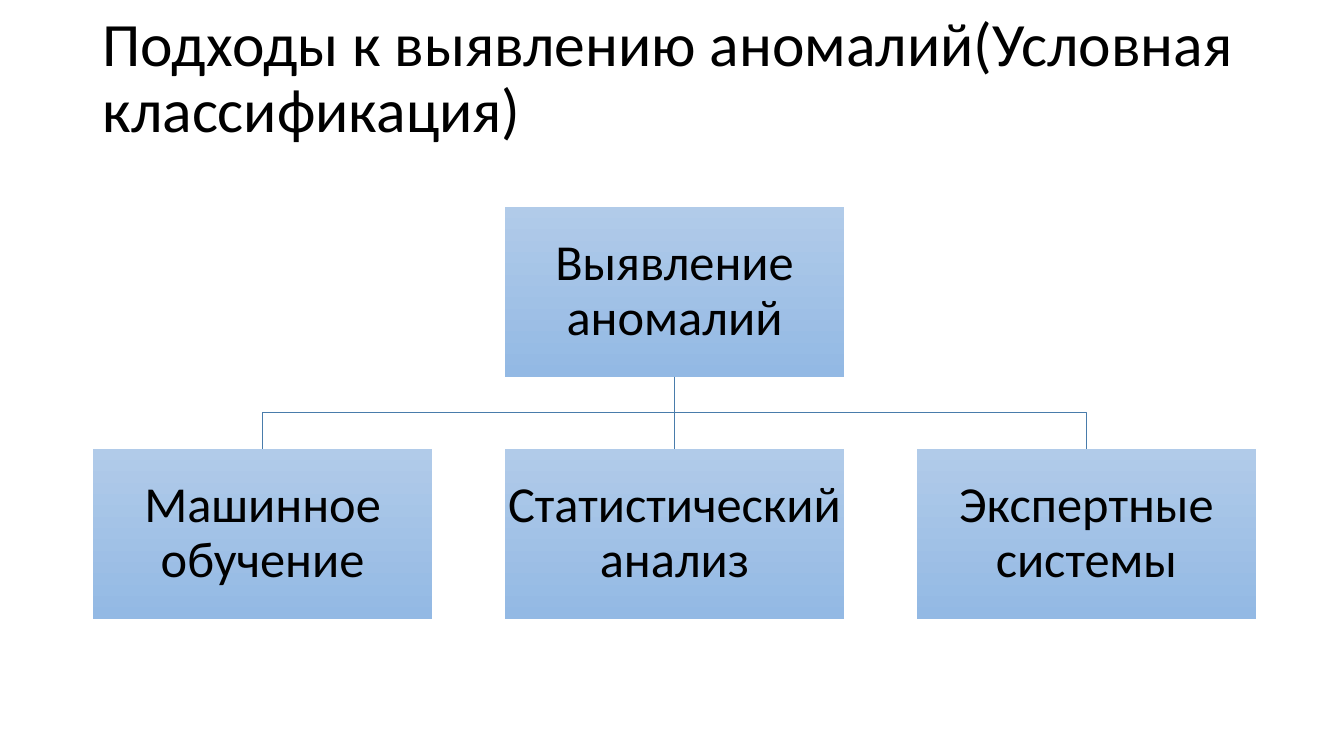
from pptx import Presentation
from pptx.dml.color import RGBColor
from pptx.enum.shapes import MSO_CONNECTOR, MSO_SHAPE
from pptx.enum.text import MSO_ANCHOR, PP_ALIGN
from pptx.oxml.ns import qn
from pptx.util import Cm, Pt
from lxml.etree import SubElement

# Content
TITLE = "Подходы к выявлению аномалий(Условная классификация)"
ROOT = "Выявление аномалий"
KINDS = ["Машинное обучение", "Статистический анализ", "Экспертные системы"]

# Layout in cm
LEFT, TOP = 2.34, 5.21
WIDE, HIGH, GAP = 8.56, 4.28, 1.82
LOW = TOP + HIGH + GAP
MID = TOP + HIGH + GAP / 2

# Formats
SHADES = ["B1CBE9", "93B9E4"]
LINE = "497CAB"
HEAD = {"size": 44, "align": PP_ALIGN.LEFT, "after": 0,
        "pads": (0.25, 0.13, 0.25, 1.83)}
NODE = {"size": 36, "align": PP_ALIGN.CENTER, "after": 0,
        "pads": (0.06, 0.06, 0.06, 0.06)}


def color(code):
    return RGBColor.from_string(code)


def assign(item, values):
    for name, value in values.items():
        setattr(item, name, value)


def write(shape, text, form):
    frame = shape.text_frame
    pads = [Cm(pad) for pad in form["pads"]]
    sides = ("margin_left", "margin_top", "margin_right", "margin_bottom")
    assign(frame, {"word_wrap": True, "vertical_anchor": MSO_ANCHOR.MIDDLE,
                   **dict(zip(sides, pads))})
    para = frame.paragraphs[0]
    assign(para, {"text": text, "alignment": form["align"],
                  "line_spacing": 0.9, "space_after": Pt(form["after"])})
    font = para.runs[0].font
    assign(font, {"name": "Calibri", "size": Pt(form["size"])})
    font.color.rgb = color("000000")


def place(col):
    return LEFT + col * (WIDE + GAP)


def box(text, col, top):
    shape = shapes.add_shape(MSO_SHAPE.RECTANGLE, Cm(place(col)), Cm(top),
                             Cm(WIDE), Cm(HIGH))
    shape.shadow.inherit = False
    shape.line.fill.background()
    shape.fill.gradient()
    shape.fill.gradient_angle = 270
    for stop, code in zip(shape.fill.gradient_stops, SHADES):
        stop.color.rgb = color(code)
    write(shape, text, NODE)
    return shape


def ink(item):
    item.line.color.rgb = color(LINE)
    item.line.width = Pt(1)


def bend(col):
    start, end = (place(c) + WIDE / 2 for c in (1, col))
    path = shapes.build_freeform(Cm(start), Cm(TOP + HIGH))
    path.add_line_segments([(Cm(start), Cm(MID)), (Cm(end), Cm(MID)),
                            (Cm(end), Cm(LOW))], close=False)
    shape = path.convert_to_shape()
    shape.shadow.inherit = False
    shape.fill.background()
    ink(shape)


def join(upper, lower):
    link = shapes.add_connector(MSO_CONNECTOR.STRAIGHT, 0, 0, 0, 0)
    link.begin_connect(upper, 2)
    link.end_connect(lower, 0)
    ink(link)
    SubElement(link._element.spPr, qn("a:effectLst"))


deck = Presentation()
assign(deck, {"slide_width": Cm(33.87), "slide_height": Cm(19.05)})
shapes = deck.slides.add_slide(deck.slide_layouts[6]).shapes

# Title
write(shapes.add_textbox(Cm(LEFT), Cm(1.02), Cm(29.21), Cm(3.68)), TITLE, HEAD)

# Tree: bent branches to the sides, a straight one in the middle
for side in (2, 0):
    bend(side)
root = box(ROOT, 1, TOP)
leaves = [box(kind, col, LOW) for col, kind in enumerate(KINDS)]
join(root, leaves[1])

deck.save("out.pptx")
